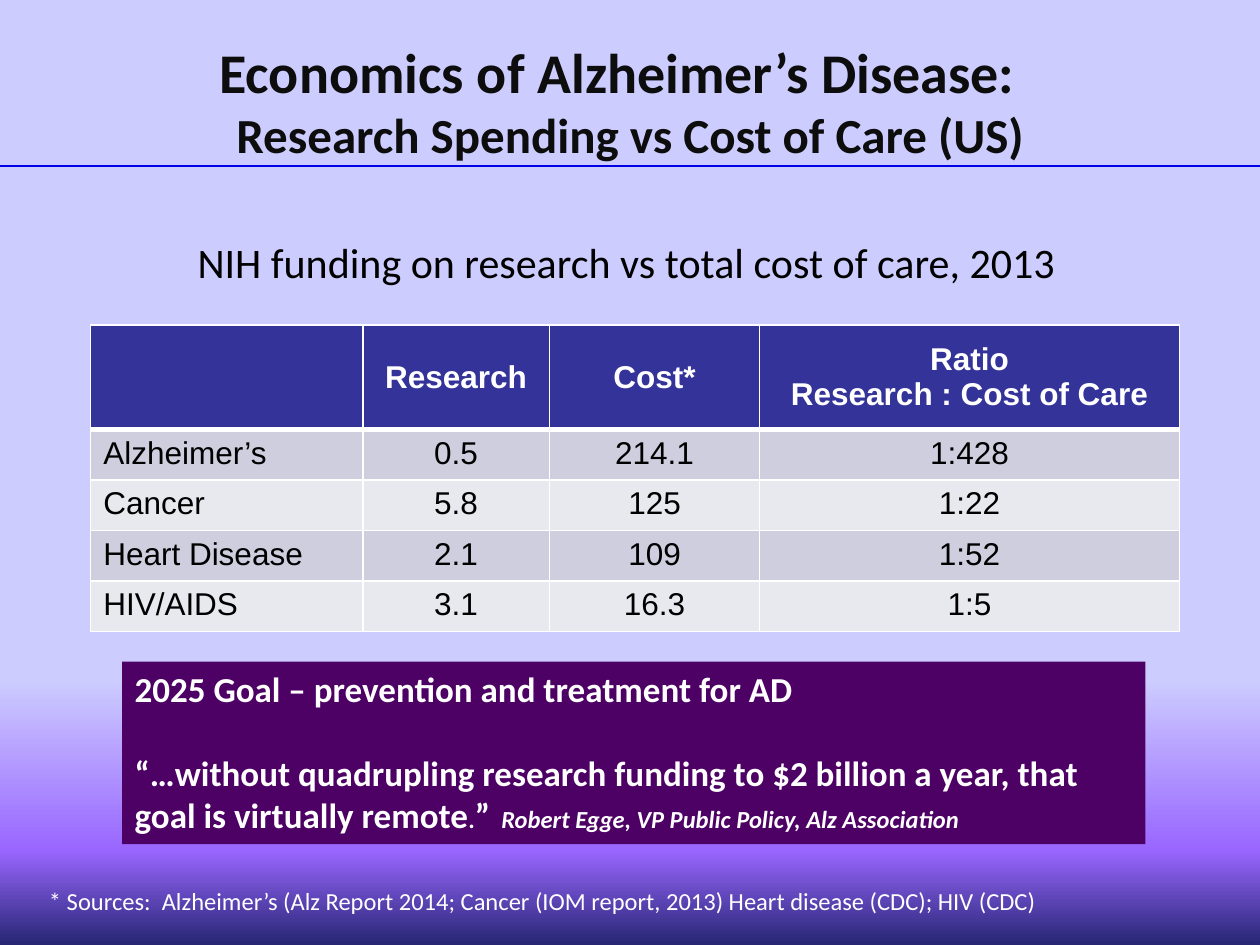
from dataclasses import dataclass

from lxml import etree
from pptx import Presentation
from pptx.dml.color import RGBColor
from pptx.enum.shapes import MSO_CONNECTOR, MSO_SHAPE
from pptx.enum.text import MSO_ANCHOR, PP_ALIGN
from pptx.oxml import parse_xml
from pptx.oxml.ns import nsdecls, qn
from pptx.util import Inches, Pt

LEFT, CENTER = PP_ALIGN.LEFT, PP_ALIGN.CENTER
TOP, MIDDLE = MSO_ANCHOR.TOP, MSO_ANCHOR.MIDDLE
STRAIGHT, RECTANGLE = MSO_CONNECTOR.STRAIGHT, MSO_SHAPE.RECTANGLE


@dataclass(frozen=True)
class Theme:
    body_font: str = "Calibri"
    table_font: str = "Arial"
    title_ink: str = "0D0D0D"
    black: str = "000000"
    white: str = "FFFFFF"
    rule: str = "0000E2"
    goal_fill: str = "4D0165"
    header_fill: str = "333399"
    bands: tuple = ("CECEDE", "E8E8EF")
    backdrop: tuple = ((0, "CCCCFF"), (72, "CCCCFF"), (90, "9966FF"), (100, "262673"))
    title: int = 32
    subtitle: int = 28
    caption: int = 24
    goal: int = 20
    table: int = 18
    small: int = 14


THEME = Theme()

TITLE = [
    ("Economics of Alzheimer’s Disease:  \v", THEME.title),
    ("Research Spending vs Cost of Care (US)", THEME.subtitle),
]
CAPTION = "NIH funding on research vs total cost of care, 2013"
HEADERS = ["", "Research", "Cost*", "Ratio\nResearch : Cost of Care"]
ROWS = [
    ("Alzheimer’s", "0.5", "214.1", "1:428"),
    ("Cancer", "5.8", "125", "1:22"),
    ("Heart Disease", "2.1", "109", "1:52"),
    ("HIV/AIDS", "3.1", "16.3", "1:5"),
]
COLUMN_WIDTHS = [2.16, 1.48, 1.67, 3.33]
HEADER_HEIGHT, ROW_HEIGHT = 0.83, 0.4
GOAL = "2025 Goal – prevention and treatment for AD"
QUOTE = [
    ("“…without quadrupling research funding to $2 billion a year, that goal is virtually remote",
     THEME.goal, False),
    (".", THEME.small, False),
    ("”", THEME.goal, False),
    ("  ", THEME.small, False),
    ("Robert Egge, VP Public Policy, Alz Association", THEME.small, True),
]
SOURCES = ("* Sources:  Alzheimer’s (Alz Report 2014; Cancer (IOM report, 2013) "
           "Heart disease (CDC); HIV (CDC)")


def style(span, size, color, font=THEME.body_font, bold=False, italic=False):
    span.font.name = font
    span.font.size = Pt(size)
    span.font.bold = bold
    span.font.italic = italic
    span.font.color.rgb = RGBColor.from_string(color)


def add_span(para, text, size, color, **options):
    span = para.add_run()
    span.text = text.rstrip("\v")
    style(span, size, color, **options)
    if text.endswith("\v"):
        para.add_line_break()


def add_text_box(page, left, top, width, height, wrap=False):
    box = page.shapes.add_textbox(*map(Inches, (left, top, width, height)))
    box.text_frame.word_wrap = wrap
    return box.text_frame


def paint_background(page):
    page.background.fill.gradient()
    page.background.fill.gradient_angle = 270
    stops = page.background.fill.gradient_stops
    stop_list = next(page.element.iter(qn("a:gsLst")))
    for stop in list(stop_list):
        stop_list.remove(stop)
    for percent, color in THEME.backdrop:
        stop_list.append(parse_xml(
            f'<a:gs {nsdecls("a")} pos="{percent * 1000}"><a:srgbClr val="{color}"/></a:gs>'))


def add_title(page):
    frame = add_text_box(page, 0.5, 0.25, 9, 1.09, wrap=True)
    frame.vertical_anchor = MIDDLE
    para = frame.paragraphs[0]
    para.alignment = CENTER
    for text, size in TITLE:
        add_span(para, text, size, THEME.title_ink, bold=True)


def add_rule(page, top):
    rule = page.shapes.add_connector(STRAIGHT, 0, Inches(top), Inches(10), Inches(top))
    rule.line.color.rgb = RGBColor.from_string(THEME.rule)
    rule.line.width = Pt(1)
    etree.SubElement(rule.element.spPr, qn("a:effectLst"))


def add_label(page, place, text, size, color):
    frame = add_text_box(page, *place)
    frame.text = text
    style(frame.paragraphs[0].runs[0], size, color)


def set_borders(cell, widths):
    properties = cell._tc.get_or_add_tcPr()
    for side, width in widths.items():
        properties.append(parse_xml(
            f'<a:ln{side} {nsdecls("a")} w="{Pt(width)}"><a:solidFill>'
            f'<a:srgbClr val="{THEME.white}"/></a:solidFill></a:ln{side}>'))


def add_funding_table(page):
    heights = [HEADER_HEIGHT] + [ROW_HEIGHT] * len(ROWS)
    size = sum(COLUMN_WIDTHS), sum(heights)
    table = page.shapes.add_table(
        len(heights), len(COLUMN_WIDTHS), *map(Inches, (0.72, 2.58, *size))).table
    for column, width in zip(table.columns, COLUMN_WIDTHS):
        column.width = Inches(width)
    for index, (row, height, values) in enumerate(zip(table.rows, heights, [HEADERS, *ROWS])):
        row.height = Inches(height)
        header = index == 0
        fill = THEME.header_fill if header else THEME.bands[(index - 1) % 2]
        borders = {"L": 1, "R": 1, "T": 3 if index == 1 else 1, "B": 3 if header else 1}
        for position, (cell, text) in enumerate(zip(row.cells, values)):
            set_borders(cell, borders)
            cell.fill.solid()
            cell.fill.fore_color.rgb = RGBColor.from_string(fill)
            cell.vertical_anchor = MIDDLE if header else TOP
            cell.text_frame.text = text
            for para in cell.text_frame.paragraphs:
                para.alignment = CENTER if header or position else LEFT
                for span in para.runs:
                    style(span, THEME.table, THEME.white if header else THEME.black,
                          font=THEME.table_font, bold=header)


def add_goal(page):
    box = page.shapes.add_shape(RECTANGLE, *map(Inches, (0.97, 5.25, 8.12, 1.45)))
    box.shadow.inherit = False
    box.fill.solid()
    box.fill.fore_color.rgb = RGBColor.from_string(THEME.goal_fill)
    box.line.fill.background()
    frame = box.text_frame
    frame.word_wrap = True
    frame.vertical_anchor = TOP
    goal, quote = frame.paragraphs[0], frame.add_paragraph()
    goal.alignment = quote.alignment = LEFT
    quote.space_before = Pt(24)
    add_span(goal, GOAL, THEME.goal, THEME.white, bold=True)
    for text, size, italic in QUOTE:
        add_span(quote, text, size, THEME.white, bold=True, italic=italic)


def main():
    deck = Presentation()
    deck.slide_width, deck.slide_height = Inches(10), Inches(7.5)
    page = deck.slides.add_slide(deck.slide_layouts[6])
    paint_background(page)
    add_title(page)
    add_rule(page, 1.32)
    add_goal(page)
    add_funding_table(page)
    add_label(page, (1.47, 1.83, 7.06, 0.5), CAPTION, THEME.caption, THEME.black)
    add_label(page, (0.29, 6.98, 8.05, 0.34), SOURCES, THEME.small, THEME.white)
    deck.save("out.pptx")


if __name__ == "__main__":
    main()
